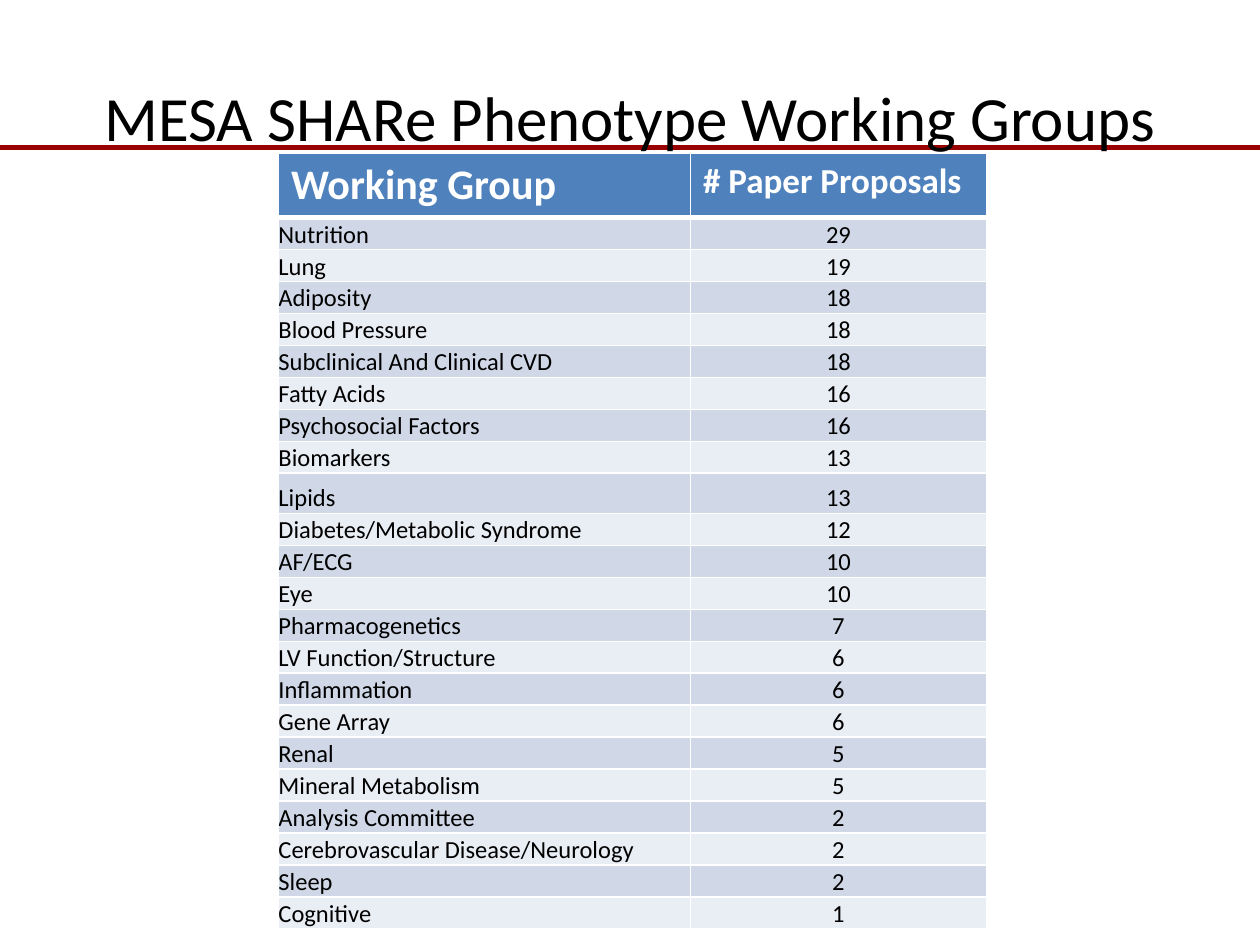
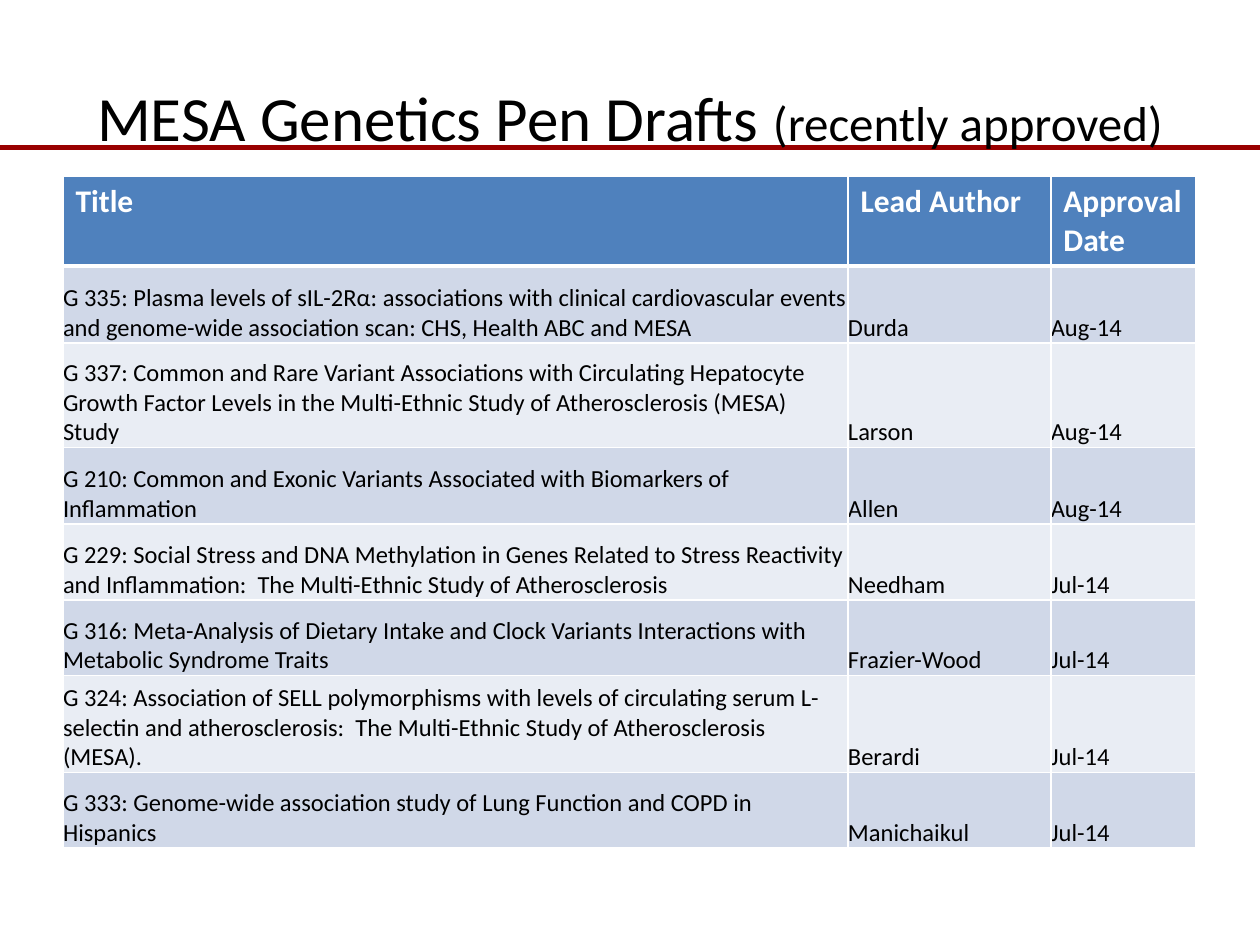
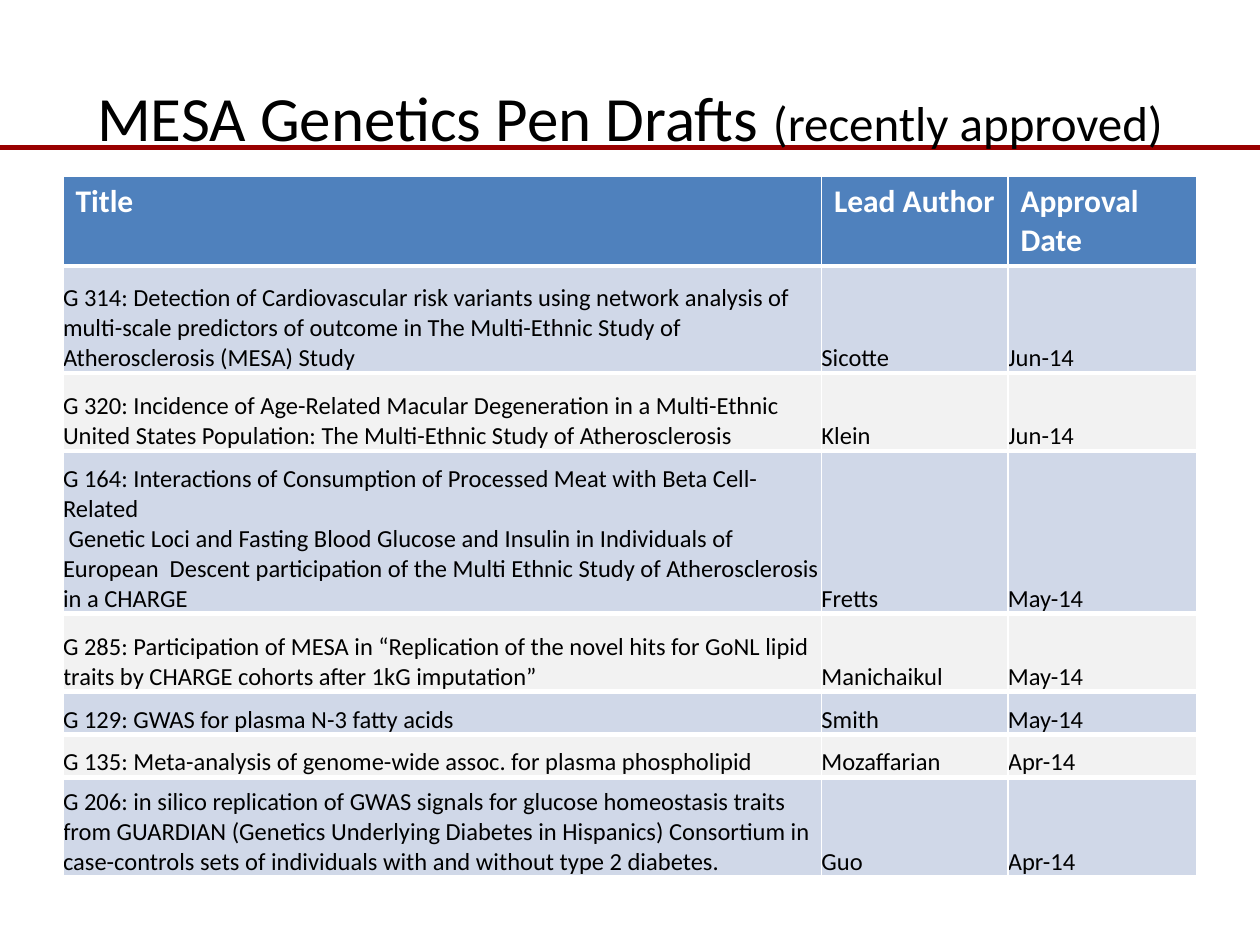
"""Build three slides on working groups and recently approved pen drafts."""
from lxml.etree import SubElement
from pptx import Presentation
from pptx.dml.color import RGBColor
from pptx.enum.shapes import MSO_CONNECTOR
from pptx.enum.text import MSO_ANCHOR, MSO_AUTO_SIZE, PP_ALIGN
from pptx.oxml.ns import qn
from pptx.util import Inches, Pt

COLORS = {
    "rule": "990000",
    "text": "000000",
    "white": "FFFFFF",
    "header": "4F81BD",
    "band": "D0D8E8",
    "light": "E9EDF4",
    "gray": "F2F2F2",
}
FONT = "Calibri"

working_groups = [
    ("Nutrition", "29"),
    ("Lung", "19"),
    ("Adiposity", "18"),
    ("Blood Pressure", "18"),
    ("Subclinical And Clinical CVD", "18"),
    ("Fatty Acids", "16"),
    ("Psychosocial Factors", "16"),
    ("Biomarkers", "13"),
    ("Lipids", "13"),
    ("Diabetes/Metabolic Syndrome", "12"),
    ("AF/ECG", "10"),
    ("Eye", "10"),
    ("Pharmacogenetics", "7"),
    ("LV Function/Structure", "6"),
    ("Inflammation", "6"),
    ("Gene Array", "6"),
    ("Renal", "5"),
    ("Mineral Metabolism", "5"),
    ("Analysis Committee", "2"),
    ("Cerebrovascular Disease/Neurology", "2"),
    ("Sleep", "2"),
    ("Cognitive", "1"),
]
summer_drafts = [
    ("G 335: Plasma levels of sIL-2Rα: associations with clinical cardiovascular events "
     "and genome-wide association scan: CHS, Health ABC and MESA", "Durda", "Aug-14"),
    ("G 337: Common and Rare Variant Associations with Circulating Hepatocyte Growth Factor "
     "Levels in the Multi-Ethnic Study of Atherosclerosis (MESA) Study", "Larson", "Aug-14"),
    ("G 210: Common and Exonic Variants Associated with Biomarkers of Inflammation",
     "Allen", "Aug-14"),
    ("G 229: Social Stress and DNA Methylation in Genes Related to Stress Reactivity and "
     "Inflammation:  The Multi-Ethnic Study of Atherosclerosis", "Needham", "Jul-14"),
    ("G 316: Meta-Analysis of Dietary Intake and Clock Variants Interactions with Metabolic "
     "Syndrome Traits", "Frazier-Wood", "Jul-14"),
    ("G 324: Association of SELL polymorphisms with levels of circulating serum L-selectin and "
     "atherosclerosis:  The Multi-Ethnic Study of Atherosclerosis (MESA).", "Berardi", "Jul-14"),
    ("G 333: Genome-wide association study of Lung Function and COPD in Hispanics",
     "Manichaikul", "Jul-14"),
]
spring_drafts = [
    ("G 314: Detection of Cardiovascular risk variants using network analysis of multi-scale "
     "predictors of outcome in The Multi-Ethnic Study of Atherosclerosis (MESA) Study",
     "Sicotte", "Jun-14"),
    ("G 320: Incidence of Age-Related Macular Degeneration in a Multi-Ethnic United States "
     "Population: The Multi-Ethnic Study of Atherosclerosis", "Klein", "Jun-14"),
    ("G 164: Interactions of Consumption of Processed Meat with Beta Cell-Related \v Genetic "
     "Loci and Fasting Blood Glucose and Insulin in Individuals of European  Descent "
     "participation of the Multi Ethnic Study of Atherosclerosis in a CHARGE",
     "Fretts", "May-14"),
    ("G 285: Participation of MESA in “Replication of the novel hits for GoNL lipid traits by "
     "CHARGE cohorts after 1kG imputation”", "Manichaikul", "May-14"),
    ("G 129: GWAS for plasma N-3 fatty acids", "Smith", "May-14"),
    ("G 135: Meta-analysis of genome-wide assoc. for plasma phospholipid",
     "Mozaffarian", "Apr-14"),
    ("G 206: in silico replication of GWAS signals for glucose homeostasis traits from GUARDIAN "
     "(Genetics Underlying Diabetes in Hispanics) Consortium in case-controls sets of "
     "individuals with and without type 2 diabetes.", "Guo", "Apr-14"),
]

draft_title = [("MESA Genetics Pen Drafts ", 36), ("(recently approved)", 28)]
draft_header = [("Title", 18), ("Lead Author", 18), ("Approval Date", 18)]
group_row = (6.15 - 0.5 - 0.32) / 21
slides = [
    dict(title=[("MESA SHARe Phenotype Working Groups", 36)],
         header=[("Working Group", 24), ("# Paper Proposals", 20)],
         rows=working_groups, left=2.21, top=1.22, columns=[3.27, 2.35],
         heights=[0.5] + [group_row] * 8 + [0.32] + [group_row] * 13,
         centered=[1], stripe="light", row_line=1),
    dict(title=draft_title, header=draft_header, rows=summer_drafts,
         left=0.5, top=1.4, columns=[6.23, 1.61, 1.15],
         heights=[0.7, 0.61, 0.83, 0.61, 0.6, 0.6, 0.77, 0.6],
         centered=[], stripe="light", row_line=1),
    dict(title=draft_title, header=draft_header, rows=spring_drafts,
         left=0.5, top=1.4, columns=[6.02, 1.48, 1.5],
         heights=[0.7, 0.85, 0.62, 1.29, 0.62, 0.34, 0.34, 0.79],
         centered=[], stripe="gray", row_line=3),
]


def set_font(font, size, color, bold=False):
    font.name = FONT
    font.size = Pt(size)
    font.bold = bold
    font.color.rgb = RGBColor.from_string(COLORS[color])


def add_border(cell, side, width):
    line = SubElement(cell._tc.get_or_add_tcPr(), qn(f"a:ln{side}"), w=str(Pt(width)))
    fill = SubElement(line, qn("a:solidFill"))
    SubElement(fill, qn("a:srgbClr"), val=COLORS["white"])


presentation = Presentation()
presentation.slide_width = Inches(10)
presentation.slide_height = Inches(7.5)
title_only = presentation.slide_layouts[5]

for number, content in enumerate(slides):
    slide = presentation.slides.add_slide(title_only)
    if number == 0:
        rule = slide.shapes.add_connector(
            MSO_CONNECTOR.STRAIGHT, 0, Inches(1.17), Inches(10), Inches(1.17))
        rule.line.color.rgb = RGBColor.from_string(COLORS["rule"])
        rule.line.width = Pt(3)
        SubElement(rule._element.spPr, qn("a:effectLst"))
        presentation.slide_master.shapes._spTree.append(rule._element)

    title = slide.shapes.title
    title.left, title.top = Inches(0.5), Inches(0.3)
    title.width, title.height = Inches(9), Inches(1.25)
    title.text_frame.auto_size = MSO_AUTO_SIZE.NONE
    title.text_frame.vertical_anchor = MSO_ANCHOR.MIDDLE
    paragraph = title.text_frame.paragraphs[0]
    paragraph.alignment = PP_ALIGN.CENTER
    for text, size in content["title"]:
        run = paragraph.add_run()
        run.text = text
        set_font(run.font, size, "text")

    heights, columns = content["heights"], content["columns"]
    table = slide.shapes.add_table(
        len(heights), len(columns), Inches(content["left"]), Inches(content["top"]),
        Inches(sum(columns)), Inches(sum(heights))).table
    for column, width in zip(table.columns, columns):
        column.width = Inches(width)
    for row, height in zip(table.rows, heights):
        row.height = Inches(height)

    row_lines = [1, 3] + [content["row_line"]] * len(content["rows"])
    labels = [text for text, size in content["header"]]
    for row_index, values in enumerate([labels] + content["rows"]):
        for column_index, text in enumerate(values):
            cell = table.cell(row_index, column_index)
            cell.text_frame.text = text
            paragraph = cell.text_frame.paragraphs[0]
            add_border(cell, "L", 1)
            add_border(cell, "R", 1)
            add_border(cell, "T", row_lines[row_index])
            add_border(cell, "B", row_lines[row_index + 1])
            if row_index == 0:
                fill_color = "header"
                set_font(paragraph.font, content["header"][column_index][1], "white", True)
            else:
                fill_color = "band" if row_index % 2 else content["stripe"]
                set_font(paragraph.font, 14, "text")
                cell.vertical_anchor = MSO_ANCHOR.BOTTOM
                cell.margin_left = cell.margin_right = 0
                cell.margin_top = cell.margin_bottom = 0
                if column_index in content["centered"]:
                    paragraph.alignment = PP_ALIGN.CENTER
            cell.fill.solid()
            cell.fill.fore_color.rgb = RGBColor.from_string(COLORS[fill_color])

presentation.save("out.pptx")
